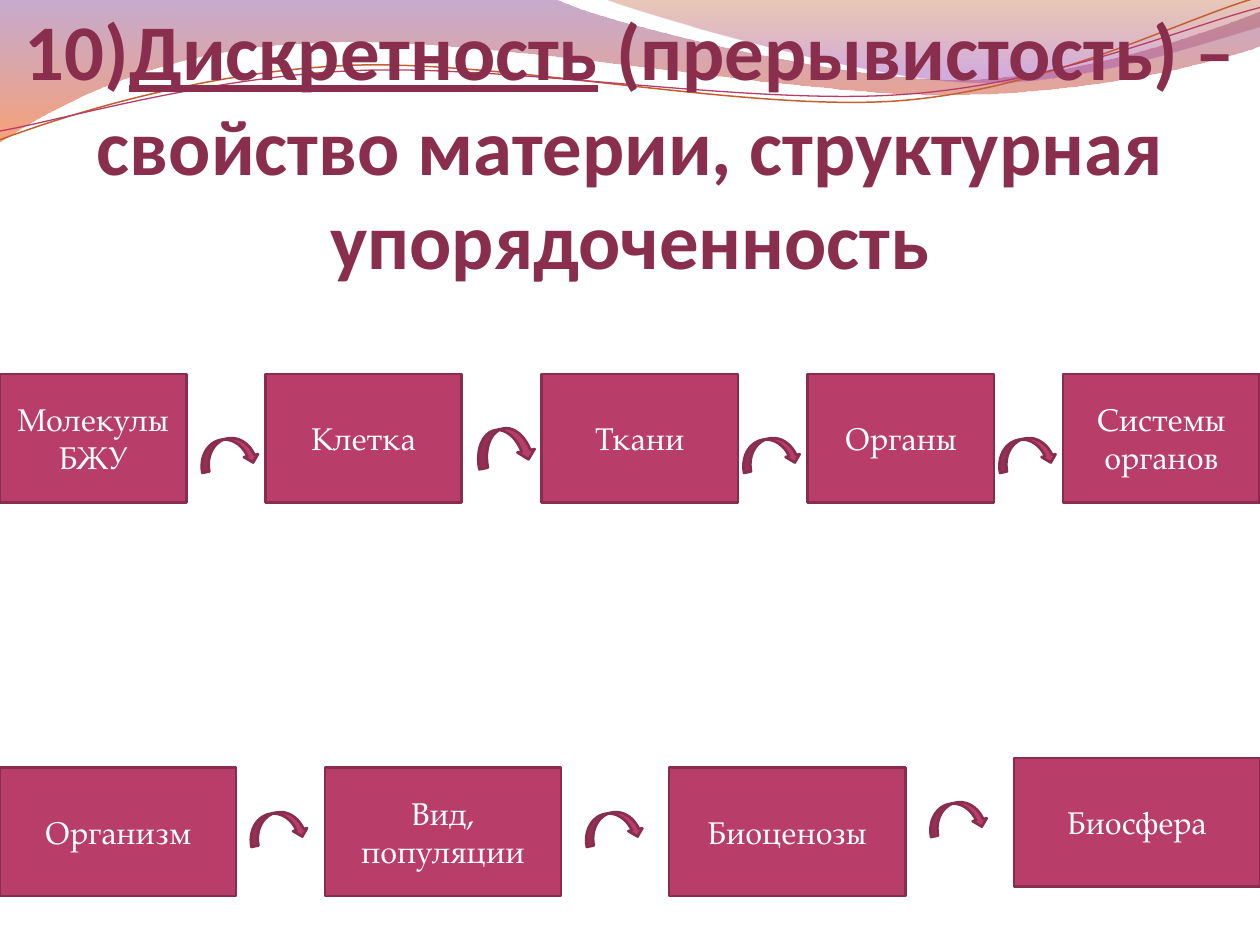
from math import cos, radians, sin
from lxml.etree import SubElement
from pptx import Presentation
from pptx.dml.color import RGBColor
from pptx.enum.shapes import MSO_SHAPE as Shape
from pptx.enum.text import MSO_ANCHOR as Anchor, PP_ALIGN as Align
from pptx.oxml.ns import qn
from pptx.util import Cm, Pt

ROSE, DARK_ROSE, TITLE_COLOR = "B83D68", "882D4D", "8A2E4E"
BOX_H, ARROW_W, ARROW_H = 2.59, 1.19, 0.58
GRID = 1000
UNIT = Cm(2.54) / GRID
CURVE_TILT = 357.3

LEFT_WAVE = [
    [(0, 0)], [(4.4, -0.01)],
    [(4.76, 0.17), (6.64, 0.63), (7.58, 0.63)],
    [(8.53, 0.63), (9.58, 0.26), (10, 0.09)],
    [(10.01, 0.36)],
    [(9.83, 0.44), (8.7, 0.76), (7.46, 0.75)],
    [(6.22, 0.75), (3.82, 0.28), (2.57, 0.34)],
    [(1.29, 0.36), (0.46, 0.83), (-0.01, 1.13)],
    [(0, 0)],
]
RIGHT_WAVE = [
    [(4.79, -0.01)],
    [(5.09, 0.11), (6.82, 0.62), (7.69, 0.65)],
    [(8.56, 0.69), (9.61, 0.32), (10, 0.21)],
    [(10, 0)], [(4.79, -0.01)],
]
ORANGE_LINE = [
    [(0, 1.11)],
    [(0.48, 0.93), (1.58, 0.57), (2.77, 0.52)],
    [(3.95, 0.47), (5.93, 0.89), (7.13, 0.8)],
    [(8.33, 0.71), (9.38, 0.15), (9.98, -0.02)],
]
ROSE_LINE = [
    [(0, 1.04)],
    [(0.47, 0.96), (1.64, 0.61), (2.83, 0.56)],
    [(4.03, 0.51), (5.97, 0.84), (7.17, 0.75)],
    [(8.36, 0.67), (9.41, 0.21), (10, 0.06)],
]

BOXES = [
    ("Молекулы БЖУ", 0, 7.54, 3.76),
    ("Клетка", 5.35, 7.54, 3.96),
    ("Ткани", 10.92, 7.54, 3.96),
    ("Органы", 16.28, 7.54, 3.76),
    ("Системы органов", 21.43, 7.54, 3.96),
    ("Организм", 0, 15.47, 4.76),
    ("Вид, популяции", 6.55, 15.47, 4.76),
    ("Биоценозы", 13.49, 15.47, 4.76),
    ("Биосфера", 20.44, 15.28, 4.96),
]
ARROWS = [
    (4.01, 8.84, ARROW_H), (9.58, 8.64, 0.71),
    (14.93, 8.84, ARROW_H), (20.09, 8.84, ARROW_H),
    (5, 16.38, ARROW_H), (11.76, 16.38, ARROW_H), (18.7, 16.18, ARROW_H),
]


def rgb(value):
    return RGBColor.from_string(value)


def turn(point, center, degrees):
    a = radians(degrees)
    dx, dy = point[0] - center[0], point[1] - center[1]
    return (center[0] + dx * cos(a) - dy * sin(a),
            center[1] + dx * sin(a) + dy * cos(a))


def add_path(slide, segments, frame, close, tilt=0):
    x, y, w, h = frame
    center = x + w / 2, y + h / 2
    builder = slide.shapes.build_freeform(x * GRID, y * GRID, scale=UNIT)
    builder.add_line_segments([((x + w) * GRID, (y + h) * GRID)], close=False)
    sp = builder.convert_to_shape()
    sp.shadow.inherit = False
    sp.rotation = tilt
    path = next(sp._element.iter(qn("a:path")))
    for child in list(path):
        path.remove(child)
    for i, segment in enumerate(segments):
        tag = "a:moveTo" if i == 0 else "a:cubicBezTo" if len(segment) == 3 else "a:lnTo"
        step = SubElement(path, qn(tag))
        for point in segment:
            px, py = turn(point, center, -tilt)
            pt = SubElement(step, qn("a:pt"))
            pt.set("x", str(round((px - x) * GRID)))
            pt.set("y", str(round((py - y) * GRID)))
    if close:
        SubElement(path, qn("a:close"))
    return sp


def add_wave(slide, segments, frame, stops):
    sp = add_path(slide, segments, frame, True)
    sp.line.fill.background()
    sp.fill.gradient()
    sp.fill.gradient_angle = 270
    for stop, (position, color, _) in zip(sp.fill.gradient_stops, stops):
        stop.position = position
        stop.color.rgb = rgb(color)
    for gs, (_, _, opacity) in zip(sp._element.iter(qn("a:gs")), stops):
        SubElement(gs[0], qn("a:alpha")).set("val", str(opacity * 1000))


def add_curve(slide, segments, frame, color, width):
    sp = add_path(slide, segments, frame, False, CURVE_TILT)
    sp.fill.background()
    sp.line.color.rgb = rgb(color)
    sp.line.width = Pt(width)


def format_run(r, size, font, color, bold=False):
    r.font.size = Pt(size)
    r.font.name = font
    r.font.color.rgb = rgb(color)
    r.font.bold = bold


def add_title(slide, parts):
    tf = slide.shapes.add_textbox(0, 0, Cm(25.4), Cm(5.76)).text_frame
    tf.word_wrap = True
    tf.vertical_anchor = Anchor.BOTTOM
    tf.margin_left = tf.margin_right = tf.margin_bottom = 0
    p = tf.paragraphs[0]
    p.alignment = Align.CENTER
    for text, underline in parts:
        r = p.add_run()
        r.text = text
        format_run(r, 45, "Calibri", TITLE_COLOR, True)
        r.font.underline = underline


def add_rose_shape(slide, kind, x, y, w, h):
    sp = slide.shapes.add_shape(kind, Cm(x), Cm(y), Cm(w), Cm(h))
    sp.shadow.inherit = False
    sp.fill.solid()
    sp.fill.fore_color.rgb = rgb(ROSE)
    sp.line.color.rgb = rgb(DARK_ROSE)
    sp.line.width = Pt(1.5)
    return sp


def add_box(slide, text, x, y, w):
    sp = add_rose_shape(slide, Shape.FLOWCHART_PROCESS, x, y, w, BOX_H)
    tf = sp.text_frame
    tf.text = text
    tf.word_wrap = True
    tf.vertical_anchor = Anchor.MIDDLE
    p = tf.paragraphs[0]
    p.alignment = Align.CENTER
    format_run(p.runs[0], 18, "TeX Gyre Pagella", "FFFFFF")


def add_arrow(slide, x, y, h):
    sp = add_rose_shape(slide, Shape.CURVED_DOWN_ARROW, x, y, ARROW_W, h)
    sp.rotation = 348.4


def main():
    prs = Presentation()
    prs.slide_width, prs.slide_height = Cm(25.4), Cm(19.05)
    slide = prs.slides.add_slide(prs.slide_layouts[6])
    add_wave(slide, LEFT_WAVE, (-0.01, -0.01, 10.02, 1.14),
             [(0, "834591", 45), (1, "F35307", 55)])
    add_wave(slide, RIGHT_WAVE, (4.79, -0.01, 5.21, 0.7),
             [(0, "B74915", 30), (0.8, "A14BB4", 45)])
    add_curve(slide, ORANGE_LINE, (-0.02, 0.22, 10.02, 0.71), "C45F30", 0.85)
    add_curve(slide, ROSE_LINE, (-0.02, 0.3, 10.03, 0.58), ROSE, 0.75)
    add_title(slide, [
        ("10)", False),
        ("Дискретность", True),
        (" (прерывистость) – свойство материи, структурная упорядоченность", False),
    ])
    for box in BOXES:
        add_box(slide, *box)
    for arrow in ARROWS:
        add_arrow(slide, *arrow)
    prs.save("out.pptx")


if __name__ == "__main__":
    main()
